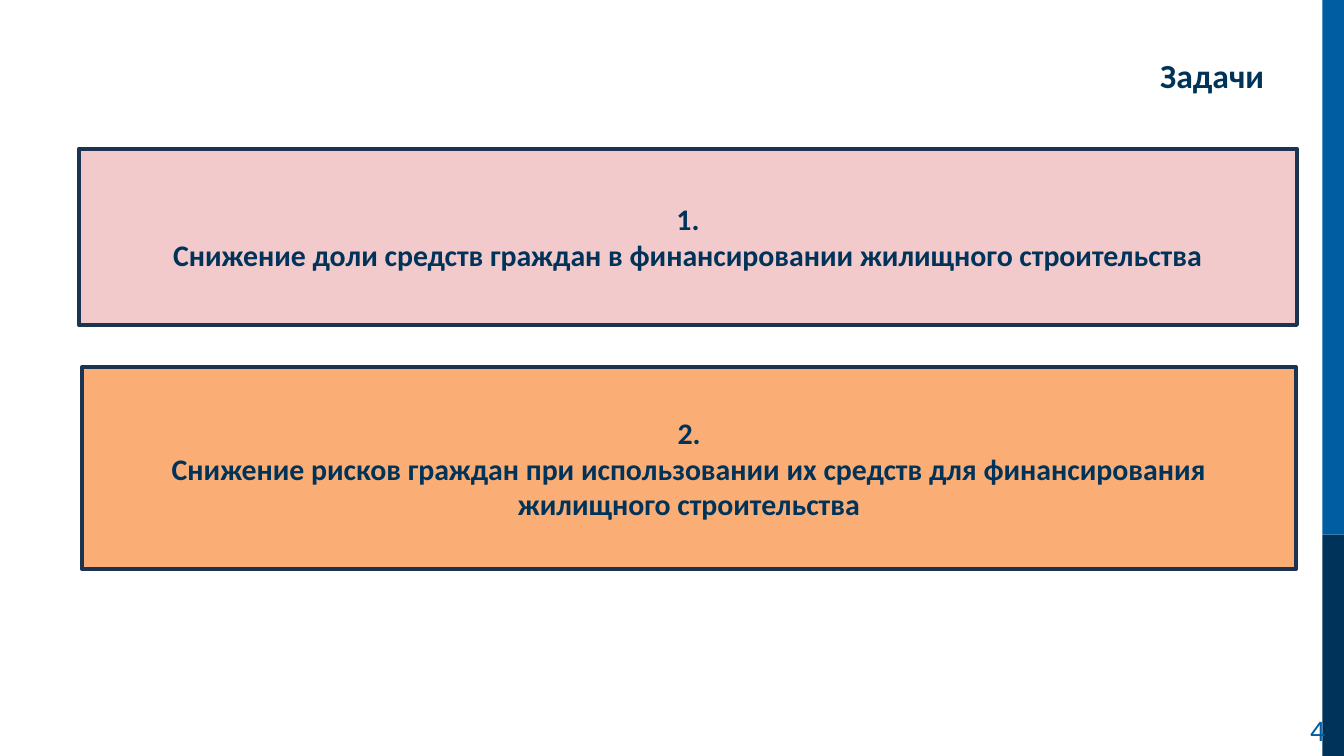
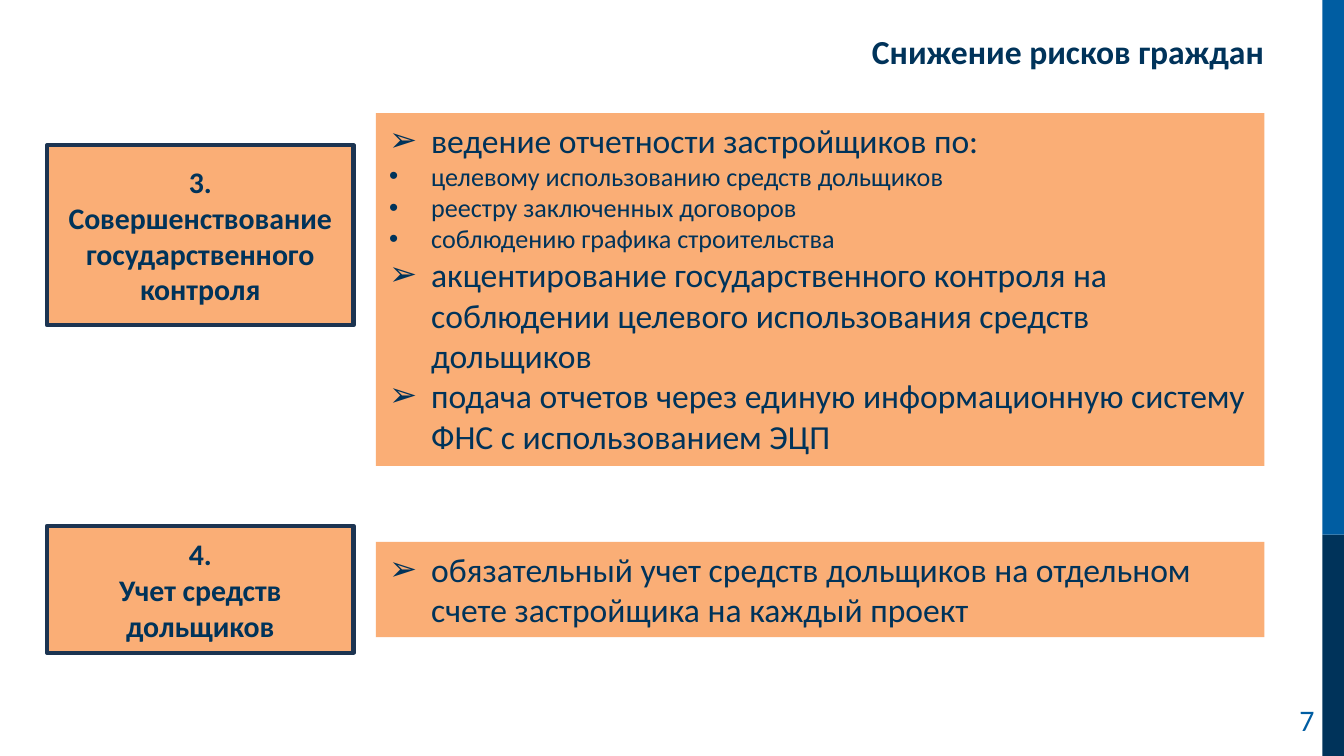
import lxml.etree
import pptx
import pptx.dml.color
import pptx.enum.shapes
import pptx.enum.text
import pptx.oxml.ns
import pptx.util

Pt = pptx.util.Pt
RGBColor = pptx.dml.color.RGBColor
ALIGN = pptx.enum.text.PP_ALIGN
ANCHOR = pptx.enum.text.MSO_ANCHOR
AUTO_SIZE = pptx.enum.text.MSO_AUTO_SIZE

NAVY = RGBColor(0x00, 0x33, 0x5A)
BLUE = RGBColor(0x00, 0x5D, 0xA2)
OUTLINE = RGBColor(0x1C, 0x34, 0x51)
PINK = RGBColor(0xF3, 0xCA, 0xCB)
ORANGE = RGBColor(0xFA, 0xAE, 0x76)

FONT = "Calibri"
SLIDE_WIDTH, SLIDE_HEIGHT = 720, 405
BAND_LEFT, BAND_SPLIT = 708.5, 286.5
TITLE_LEFT, TITLE_TOP, TITLE_WIDTH = 145.4, 16.6, 538.6
BULLET_INDENT = 22.5
ARROW, DOT = "➢", "•"
BULLET_SIZES = {ARROW: 18, DOT: 14}
LABEL_LEFT, LABEL_WIDTH = 25.2, 164.2
LIST_LEFT, LIST_WIDTH = 201.4, 476

# Boxes are (left, top, width, height).
SLIDES = [
    {
        "title": "Задачи",
        "title_height": 47.5,
        "number": "4",
        "number_box": (694.8, 378, 23, 26.6),
        "cards": [
            ((42.3, 79.7, 652.5, 94.4), PINK,
             ["1.", "Снижение доли средств граждан в финансировании жилищного строительства"]),
            ((43.9, 196.8, 650.5, 108), ORANGE,
             ["2.", "Снижение рисков граждан при использовании их средств "
                    "для финансирования жилищного строительства"]),
        ],
        "lists": [],
    },
    {
        "title": "Снижение рисков граждан",
        "title_height": 21.6,
        "number": "7",
        "number_box": (689, 372.2, 23, 26.6),
        "cards": [
            ((LABEL_LEFT, 77.8, LABEL_WIDTH, 96.5), ORANGE,
             ["3.", "Совершенствование государственного контроля"]),
            ((LABEL_LEFT, 281.7, LABEL_WIDTH, 68), ORANGE,
             ["4.", "Учет средств дольщиков"]),
        ],
        "lists": [
            ((LIST_LEFT, 60.6, LIST_WIDTH, 189), [
                (ARROW, "ведение отчетности застройщиков по:"),
                (DOT, "целевому использованию средств дольщиков"),
                (DOT, "реестру заключенных договоров"),
                (DOT, "соблюдению графика строительства"),
                (ARROW, "акцентирование государственного контроля на соблюдении "
                        "целевого использования средств дольщиков"),
                (ARROW, "подача отчетов через единую информационную систему "
                        "ФНС с использованием ЭЦП"),
            ]),
            ((LIST_LEFT, 290.3, LIST_WIDTH, 51), [
                (ARROW, "обязательный учет средств дольщиков на отдельном "
                        "счете застройщика на каждый проект"),
            ]),
        ],
    },
]


def set_values(target, values):
    for name, value in values.items():
        setattr(target, name, value)


def to_points(box):
    return [Pt(length) for length in box]


def write_paragraphs(frame, texts, size, color=NAVY, bold=False, align=ALIGN.LEFT):
    for index, text in enumerate(texts):
        paragraph = frame.add_paragraph() if index else frame.paragraphs[0]
        paragraph.alignment = align
        run = paragraph.add_run()
        run.text = text
        set_values(run.font, {"name": FONT, "size": Pt(size), "bold": bold})
        run.font.color.rgb = color


def add_rectangle(slide, box, fill, line=None):
    shape = slide.shapes.add_shape(pptx.enum.shapes.MSO_SHAPE.RECTANGLE, *to_points(box))
    shape.shadow.inherit = False
    shape.fill.solid()
    shape.fill.fore_color.rgb = fill
    if line is None:
        shape.line.fill.background()
    else:
        shape.line.color.rgb = line
        shape.line.width = Pt(2.25)
    return shape


def add_bands(slide):
    width = SLIDE_WIDTH - BAND_LEFT
    add_rectangle(slide, (BAND_LEFT, BAND_SPLIT, width, SLIDE_HEIGHT - BAND_SPLIT), NAVY)
    add_rectangle(slide, (BAND_LEFT, 0, width, BAND_SPLIT), BLUE)


def format_title(slide, text, height):
    title = slide.shapes.title
    box = to_points((TITLE_LEFT, TITLE_TOP, TITLE_WIDTH, height))
    set_values(title, dict(zip(("left", "top", "width", "height"), box)))
    set_values(title.text_frame, {
        "word_wrap": True, "auto_size": AUTO_SIZE.NONE, "vertical_anchor": ANCHOR.MIDDLE,
        "margin_left": Pt(6.75), "margin_right": Pt(6.75),
        "margin_top": Pt(3), "margin_bottom": Pt(3),
    })
    write_paragraphs(title.text_frame, [text], 18, bold=True, align=ALIGN.RIGHT)


def add_number(slide, text, box):
    frame = slide.shapes.add_textbox(*to_points(box)).text_frame
    set_values(frame, {"word_wrap": False, "auto_size": AUTO_SIZE.SHAPE_TO_FIT_TEXT})
    write_paragraphs(frame, [text], 16, BLUE)


def add_card(slide, box, fill, texts):
    frame = add_rectangle(slide, box, fill, OUTLINE).text_frame
    set_values(frame, {"word_wrap": True, "vertical_anchor": ANCHOR.MIDDLE})
    write_paragraphs(frame, texts, 16, bold=True, align=ALIGN.CENTER)


def add_bullet(paragraph, character):
    properties = paragraph._p.get_or_add_pPr()
    properties.set("marL", str(Pt(BULLET_INDENT)))
    properties.set("indent", str(-Pt(BULLET_INDENT)))
    for tag, name, value in (("a:buFont", "typeface", "Arial"), ("a:buChar", "char", character)):
        lxml.etree.SubElement(properties, pptx.oxml.ns.qn(tag)).set(name, value)


def add_list(slide, box, items):
    shape = slide.shapes.add_textbox(*to_points(box))
    shape.fill.solid()
    shape.fill.fore_color.rgb = ORANGE
    frame = shape.text_frame
    set_values(frame, {"word_wrap": True, "auto_size": AUTO_SIZE.SHAPE_TO_FIT_TEXT})
    write_paragraphs(frame, [text for _, text in items], BULLET_SIZES[ARROW])
    for paragraph, (character, _) in zip(frame.paragraphs, items):
        add_bullet(paragraph, character)
        paragraph.runs[0].font.size = Pt(BULLET_SIZES[character])


def main():
    presentation = pptx.Presentation()
    set_values(presentation, {"slide_width": Pt(SLIDE_WIDTH), "slide_height": Pt(SLIDE_HEIGHT)})
    title_only = presentation.slide_layouts.get_by_name("Title Only")
    for content in SLIDES:
        slide = presentation.slides.add_slide(title_only)
        add_bands(slide)
        format_title(slide, content["title"], content["title_height"])
        add_number(slide, content["number"], content["number_box"])
        for card in content["cards"]:
            add_card(slide, *card)
        for bullet_list in content["lists"]:
            add_list(slide, *bullet_list)
    presentation.save("out.pptx")


if __name__ == "__main__":
    main()
